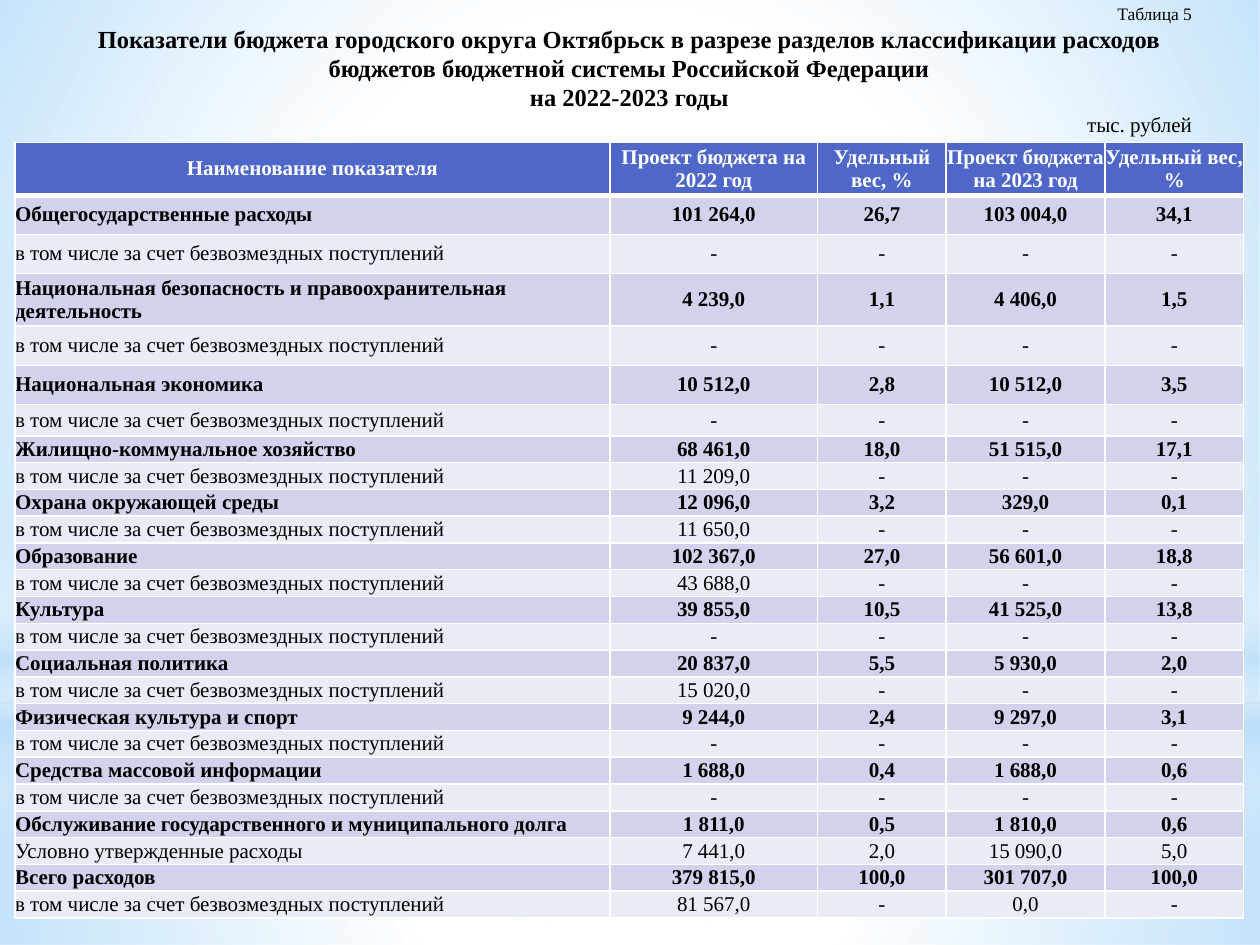
from dataclasses import dataclass

from pptx import Presentation
from pptx import util as u
from pptx.dml.color import RGBColor
from pptx.enum import shapes, text
from pptx.oxml import parse_xml
from pptx.oxml.ns import nsdecls, qn


@dataclass(frozen=True)
class Theme:
    """Colours, font and type sizes of the slide."""
    font: str = "Times New Roman"
    ink: str = "000000"
    white: str = "FFFFFF"
    sky: str = "B4DCFA"
    header: str = "4E67C8"
    section: str = "D0D3EB"
    detail: str = "E9EBF5"
    label_size: int = 10
    body_size: int = 12
    title_size: int = 14
    rule: int = 1
    header_rule: int = 3


THEME = Theme()
COLUMNS, ROWS = 100, 75
CELL = u.Inches(0.1)
GRANTS = "в том числе за счет безвозмездных поступлений"
NONE = ("-",) * 4
HEADINGS = ("Наименование показателя", "Проект бюджета на 2022 год", "Удельный вес, %",
            "Проект бюджета на 2023 год", "Удельный вес, %")
SECTIONS = (
    ("Общегосударственные расходы", "101 264,0", "26,7", "103 004,0", "34,1"),
    (GRANTS, *NONE),
    ("Национальная безопасность и правоохранительная деятельность", "4 239,0", "1,1", "4 406,0", "1,5"),
    (GRANTS, *NONE),
    ("Национальная экономика", "10 512,0", "2,8", "10 512,0", "3,5"),
    (GRANTS, *NONE),
    ("Жилищно-коммунальное хозяйство", "68 461,0", "18,0", "51 515,0", "17,1"),
    (GRANTS, "11 209,0", "-", "-", "-"),
    ("Охрана окружающей среды", "12 096,0", "3,2", "329,0", "0,1"),
    (GRANTS, "11 650,0", "-", "-", "-"),
    ("Образование", "102 367,0", "27,0", "56 601,0", "18,8"),
    (GRANTS, "43 688,0", "-", "-", "-"),
    ("Культура", "39 855,0", "10,5", "41 525,0", "13,8"),
    (GRANTS, *NONE),
    ("Социальная политика", "20 837,0", "5,5", "5 930,0", "2,0"),
    (GRANTS, "15 020,0", "-", "-", "-"),
    ("Физическая культура и спорт", "9 244,0", "2,4", "9 297,0", "3,1"),
    (GRANTS, *NONE),
    ("Средства массовой информации", "1 688,0", "0,4", "1 688,0", "0,6"),
    (GRANTS, *NONE),
    ("Обслуживание государственного и муниципального долга", "1 811,0", "0,5", "1 810,0", "0,6"),
    ("Условно утвержденные расходы", "7 441,0", "2,0", "15 090,0", "5,0"),
    ("Всего расходов", "379 815,0", "100,0", "301 707,0", "100,0"),
    (GRANTS, "81 567,0", "-", "0,0", "-"),
)
COLUMN_SPANS = (47.2, 16.5, 10.2, 12.6, 11)
TALL_ROWS = (4.2, 3.1, 3.1, 4.2, 3.1, 3.1, 2.5)


def place(*box):
    """Turn grid units into slide lengths."""
    return [u.Emu(round(part * CELL)) for part in box]


def write(paragraph, words, size, color, bold, align):
    """Add one formatted run to a paragraph and align it."""
    paragraph.alignment = align
    run = paragraph.add_run()
    run.text = words
    run.font.name, run.font.size, run.font.bold = THEME.font, u.Pt(size), bold
    run.font.color.rgb = RGBColor.from_string(color)


def gradient(stops, direction):
    """Build a gradient fill from (position, colour, opacity) stops."""
    marks = "".join(
        f'<a:gs pos="{pos * 1000}"><a:srgbClr val="{color}"><a:alpha val="{opacity * 1000}"/></a:srgbClr></a:gs>'
        for pos, color, opacity in stops)
    return parse_xml(f'<a:gradFill {nsdecls("a")} rotWithShape="1"><a:gsLst>{marks}</a:gsLst>{direction}</a:gradFill>')


def add_backdrop(slide, box):
    """Lay the soft sky glow on the layout behind the slide content."""
    left, top, width, height = box
    white, sky = THEME.white, THEME.sky
    radial = '<a:path path="circle"><a:fillToRect l="50000" t="50000" r="50000" b="50000"/></a:path>'
    downward = '<a:lin ang="5400000" scaled="0"/>'
    rect, oval = shapes.MSO_SHAPE.RECTANGLE, shapes.MSO_SHAPE.OVAL
    horizon = 55.8
    glows = (
        (rect, horizon, height - horizon, ((0, white, 91), (37, white, 76), (100, sky, 79)), radial),
        (rect, 0, horizon, ((0, white, 89), (48, white, 62), (100, sky, 79)), radial),
        (rect, 41.2, 25, ((0, white, 0), (29, white, 30), (45, sky, 40), (55, white, 26),
                          (65, sky, 60), (100, white, 0)), downward),
        (oval, 17.5, horizon, ((0, white, 100), (56, white, 0)), radial),
    )
    for order, (outline, offset, depth, stops, direction) in enumerate(glows):
        glow = slide.shapes.add_shape(outline, *place(left, top + offset, width, depth))
        glow.shadow.inherit = False
        glow.line.fill.background()
        glow.fill.background()
        properties = glow.element.spPr
        properties.replace(properties.find(qn("a:noFill")), gradient(stops, direction))
        glow.element.nvSpPr.cNvPr.id = 100 + order
        slide.slide_layout.shapes.element.append(glow.element)


def add_heading(slide, box):
    """Fill the title with the table number, heading and unit."""
    title = slide.shapes.title
    title.left, title.top, title.width, title.height = place(*box)
    frame = title.text_frame
    frame.word_wrap = True
    frame.auto_size = text.MSO_AUTO_SIZE.NONE
    frame.vertical_anchor = text.MSO_ANCHOR.TOP
    right, center = text.PP_ALIGN.RIGHT, text.PP_ALIGN.CENTER
    lines = (
        ("Таблица 5", THEME.label_size, False, right),
        ("Показатели бюджета городского округа Октябрьск в разрезе разделов классификации расходов "
         "бюджетов бюджетной системы Российской Федерации", THEME.title_size, True, center),
        ("на 2022-2023 годы", THEME.title_size, True, center),
        ("тыс. рублей", THEME.body_size, False, right),
    )
    for order, (words, size, bold, align) in enumerate(lines):
        paragraph = frame.add_paragraph() if order else frame.paragraphs[0]
        write(paragraph, words, size, THEME.ink, bold, align)


def format_cell(cell, words, fill, color, bold, align, top_rule, bottom_rule):
    """Write one table cell with its borders and fill."""
    cell.margin_left = cell.margin_right = cell.margin_top = cell.margin_bottom = 0
    cell.vertical_anchor = text.MSO_ANCHOR.MIDDLE
    borders = {"L": THEME.rule, "R": THEME.rule, "T": top_rule, "B": bottom_rule}
    for side, weight in borders.items():
        cell._tc.get_or_add_tcPr().append(parse_xml(
            f'<a:ln{side} {nsdecls("a")} w="{u.Pt(weight)}"><a:solidFill>'
            f'<a:srgbClr val="{THEME.white}"/></a:solidFill></a:ln{side}>'))
    cell.fill.solid()
    cell.fill.fore_color.rgb = RGBColor.from_string(fill)
    write(cell.text_frame.paragraphs[0], words, THEME.body_size, color, bold, align)


def add_budget(slide, box):
    """Add the budget table, sharing the height left by tall rows equally."""
    records = (HEADINGS, *SECTIONS)
    budget = slide.shapes.add_table(len(records), len(HEADINGS), *place(*box)).table
    for column, span in zip(budget.columns, COLUMN_SPANS):
        column.width = place(span)[0]
    line_count = len(records) - len(TALL_ROWS)
    line_height = (box[3] - sum(TALL_ROWS)) / line_count
    for row, span in zip(budget.rows, TALL_ROWS + (line_height,) * line_count):
        row.height = place(span)[0]
    for r, record in enumerate(records):
        is_header, is_section = r == 0, r % 2 == 1
        fill = THEME.header if is_header else THEME.section if is_section else THEME.detail
        color = THEME.white if is_header else THEME.ink
        top_rule = THEME.header_rule if r == 1 else THEME.rule
        bottom_rule = THEME.header_rule if is_header else THEME.rule
        for c, words in enumerate(record):
            align = text.PP_ALIGN.CENTER if is_header or c else text.PP_ALIGN.LEFT
            format_cell(budget.cell(r, c), words, fill, color, is_header or is_section,
                        align, top_rule, bottom_rule)


def main():
    """Build and save the budget slide."""
    deck = Presentation()
    deck.slide_width, deck.slide_height = place(COLUMNS, ROWS)
    slide = deck.slides.add_slide(deck.slide_layouts.get_by_name("Title Only"))
    add_backdrop(slide, (0, 0, COLUMNS, ROWS))
    add_heading(slide, (4.3, -0.3, 91.3, 11.8))
    add_budget(slide, (1.2, 11.3, 97.6, 61.6))
    deck.save("out.pptx")


if __name__ == "__main__":
    main()
